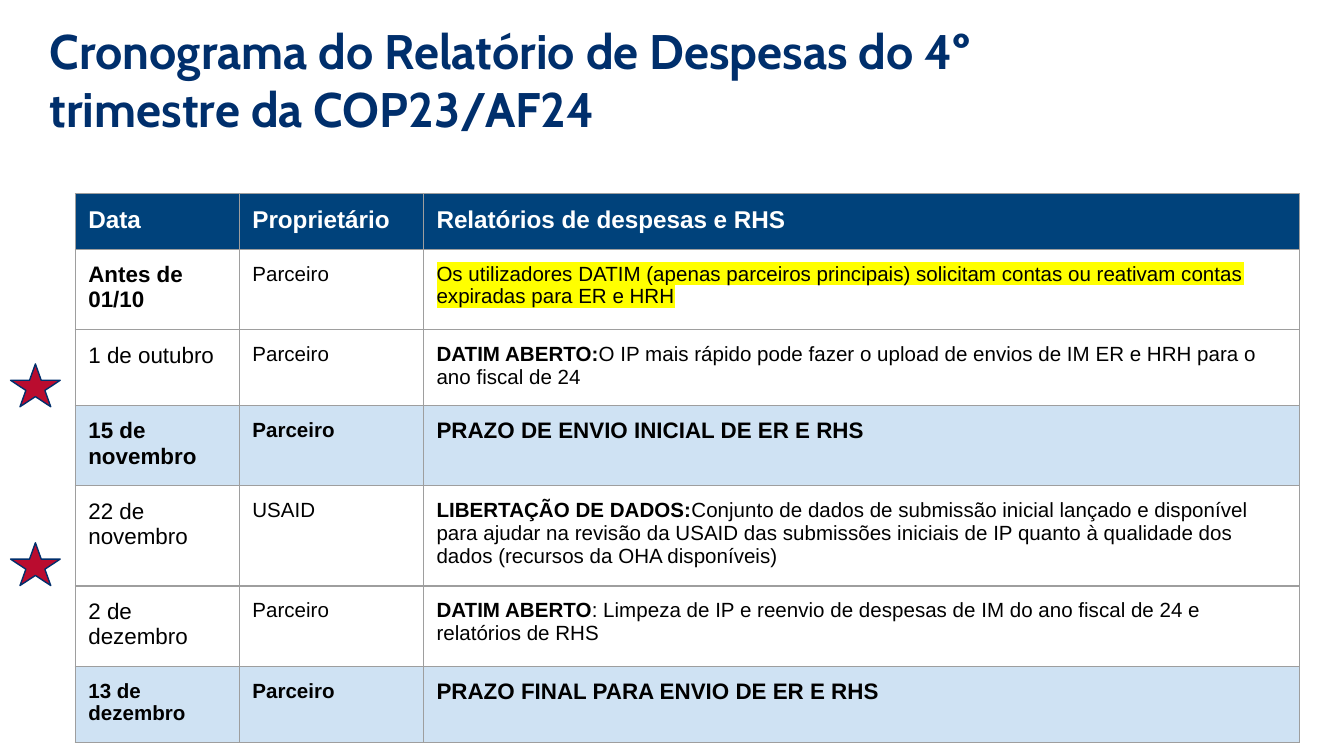
from dataclasses import dataclass
from typing import Optional

from lxml import etree
from pptx import Presentation
from pptx import util as u
from pptx.dml.color import RGBColor
from pptx.enum import shapes, text
from pptx.oxml import ns

NAVY = RGBColor(0x00, 0x2F, 0x6C)
HEADER_BLUE = RGBColor(0x00, 0x42, 0x7B)
DEADLINE_BLUE = RGBColor(0xCF, 0xE2, 0xF3)
RED = RGBColor(0xBA, 0x0C, 0x2F)
BORDER_GREY = RGBColor(0x9E, 0x9E, 0x9E)
YELLOW = RGBColor(0xFF, 0xFF, 0x00)
BLACK = RGBColor(0, 0, 0)
WHITE = RGBColor(0xFF, 0xFF, 0xFF)

INSET = u.Cm(0.25)
COLUMN_WIDTHS = (3.1, 3.48, 16.56)
ROW_HEIGHTS = (0.91, 0.89, 0.89, 0.89, 0.89, 0.89, 0.84)
STAR_TOPS = (6.88, 10.26)


@dataclass(frozen=True)
class Run:
    words: str
    size: float = 11
    bold: bool = False
    color: RGBColor = BLACK
    font: str = "Arial"
    highlight: Optional[RGBColor] = None


@dataclass(frozen=True)
class Row:
    cells: tuple[list[Run], ...]
    fill: Optional[RGBColor] = None


def header(*labels: str) -> Row:
    return Row(tuple([Run(label, 13, True, WHITE)] for label in labels), HEADER_BLUE)


def step(date: Run, owner: str, *report: Run) -> Row:
    return Row(([date], [Run(owner)], list(report)))


def deadline(date: Run, report: str) -> Row:
    return Row(([date], [Run("Parceiro", bold=True)], [Run(report, 12, True)]), DEADLINE_BLUE)


SCHEDULE = [
    header("Data", "Proprietário", "Relatórios de despesas e RHS"),
    step(Run("Antes de 01/10", 12, True), "Parceiro",
         Run("Os utilizadores DATIM (apenas parceiros principais) solicitam contas ou "
             "reativam contas expiradas para ER e HRH", highlight=YELLOW)),
    step(Run("1 de outubro", 12), "Parceiro",
         Run("DATIM ABERTO:", bold=True),
         Run("O IP mais rápido pode fazer o upload de envios de IM ER e HRH para o "
             "ano fiscal de 24")),
    deadline(Run("15 de novembro", 12, True), "PRAZO DE ENVIO INICIAL DE ER E RHS"),
    step(Run("22 de novembro", 12), "USAID",
         Run("LIBERTAÇÃO DE DADOS:", bold=True),
         Run("Conjunto de dados de submissão inicial lançado e disponível para ajudar na "
             "revisão da USAID das submissões iniciais de IP quanto à qualidade dos dados "
             "(recursos da OHA disponíveis)")),
    step(Run("2 de dezembro", 12), "Parceiro",
         Run("DATIM ABERTO", bold=True),
         Run(": Limpeza de IP e reenvio de despesas de IM do ano fiscal de 24 e "
             "relatórios de RHS")),
    deadline(Run("13 de dezembro", 11, True), "PRAZO FINAL PARA ENVIO DE ER E RHS"),
]


def add_color(parent, tag: str, color: RGBColor) -> None:
    element = etree.SubElement(parent, ns.qn(tag))
    etree.SubElement(element, ns.qn("a:srgbClr"), val=str(color))


def write_runs(paragraph, runs: list[Run]) -> None:
    for part in runs:
        run = paragraph.add_run()
        run.text = part.words
        run.font.size = u.Pt(part.size)
        run.font.bold = part.bold
        run.font.color.rgb = part.color
        if part.highlight is not None:
            add_color(run.font._element, "a:highlight", part.highlight)
        run.font.name = part.font


def add_title(slide, title: Run) -> None:
    box = slide.shapes.add_textbox(u.Cm(0.69), u.Cm(1.57), u.Cm(21.59), u.Cm(1.27))
    frame = box.text_frame
    frame.word_wrap = True
    frame.vertical_anchor = text.MSO_ANCHOR.BOTTOM
    frame.margin_left = frame.margin_right = INSET
    frame.margin_top = frame.margin_bottom = INSET
    write_runs(frame.paragraphs[0], [title])


def add_star(slide, top: float) -> None:
    star = slide.shapes.add_shape(
        shapes.MSO_SHAPE.STAR_5_POINT, u.Cm(0.2), u.Cm(top), u.Cm(0.94), u.Cm(0.81))
    star.shadow.inherit = False
    star.fill.solid()
    star.fill.fore_color.rgb = RED
    star.line.color.rgb = NAVY
    star.line.width = u.Pt(0.75)


def add_borders(cell) -> None:
    properties = cell._tc.get_or_add_tcPr()
    for side in ("a:lnL", "a:lnR", "a:lnT", "a:lnB"):
        line = etree.SubElement(properties, ns.qn(side), w=str(u.Pt(0.75)))
        add_color(line, "a:solidFill", BORDER_GREY)


def fill_cell(cell, runs: list[Run], color: Optional[RGBColor]) -> None:
    cell.margin_left = cell.margin_right = INSET
    cell.margin_top = cell.margin_bottom = INSET
    add_borders(cell)
    if color is None:
        cell.fill.background()
    else:
        cell.fill.solid()
        cell.fill.fore_color.rgb = color
    write_runs(cell.text_frame.paragraphs[0], runs)


def add_schedule(slide) -> None:
    """Add the table with minimum row heights; rows grow to fit their text."""
    table = slide.shapes.add_table(
        len(SCHEDULE), len(COLUMN_WIDTHS), u.Cm(1.42), u.Cm(3.66),
        u.Cm(sum(COLUMN_WIDTHS)), u.Cm(sum(ROW_HEIGHTS))).table
    for column, width in zip(table.columns, COLUMN_WIDTHS):
        column.width = u.Cm(width)
    for table_row, height, row in zip(table.rows, ROW_HEIGHTS, SCHEDULE):
        table_row.height = u.Cm(height)
        for cell, runs in zip(table_row.cells, row.cells):
            fill_cell(cell, runs, row.fill)


def main() -> None:
    deck = Presentation()
    deck.slide_width, deck.slide_height = u.Cm(25.4), u.Cm(14.29)
    slide = deck.slides.add_slide(deck.slide_layouts[6])
    add_title(slide, Run("Cronograma do Relatório de Despesas do 4º trimestre da COP23/AF24",
                         26, True, NAVY, "Cabin"))
    for top in STAR_TOPS:
        add_star(slide, top)
    add_schedule(slide)
    deck.save("out.pptx")


if __name__ == "__main__":
    main()
